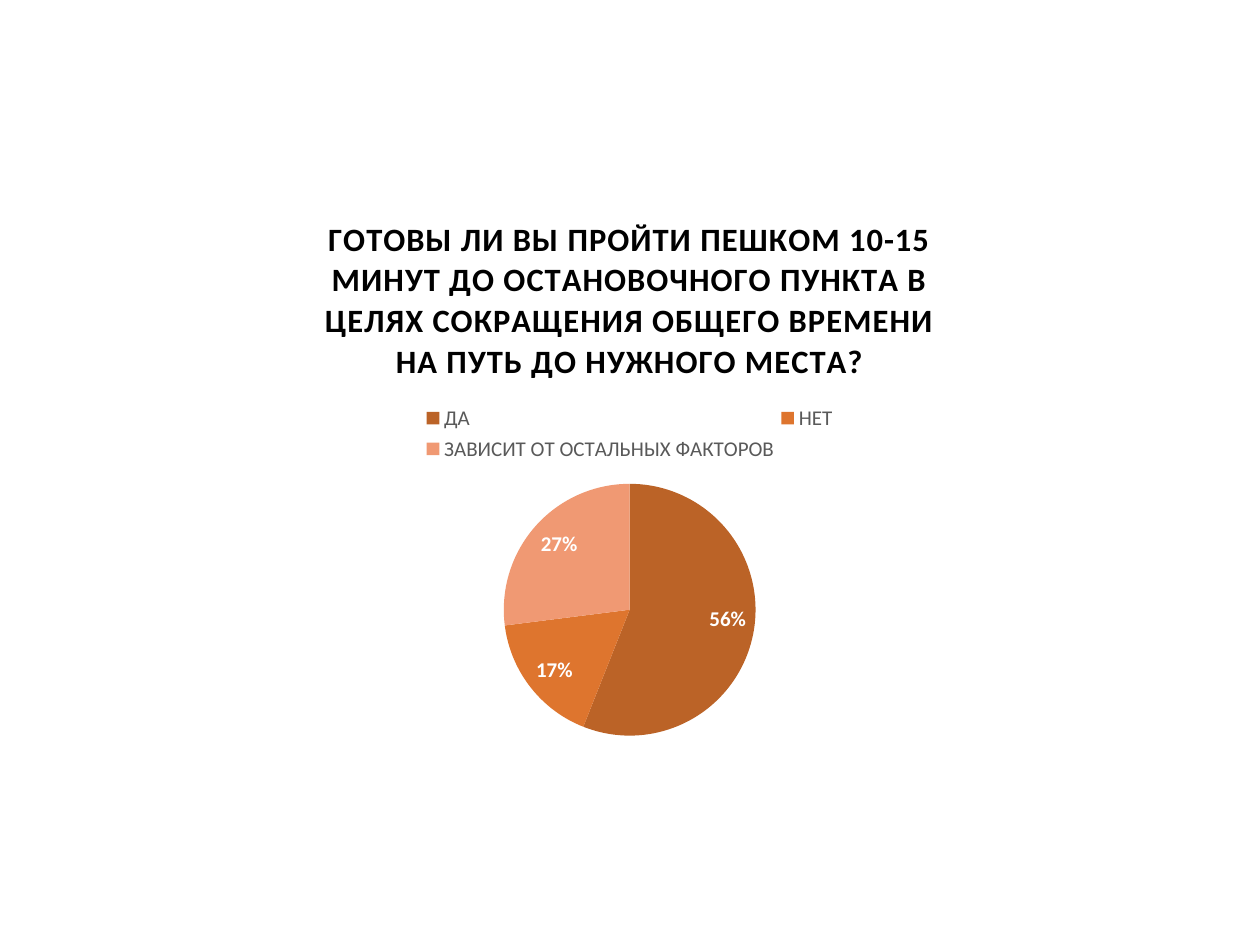
import dataclasses

import lxml.etree
import pptx
import pptx.chart.data
import pptx.dml.color
import pptx.enum.chart
import pptx.oxml.ns
import pptx.util


@dataclasses.dataclass(frozen=True)
class Theme:
    """Colours, font and type sizes of the slide."""

    font: str = "Calibri"
    title_color: str = "000000"
    legend_color: str = "595959"
    label_color: str = "FFFFFF"
    slice_colors: tuple = ("BB6327", "DE752E", "F09973")
    base_size: float = 10
    title_size: float = 18.6
    text_size: float = 12
    title_spacing: int = 50


class SlideBuilder:
    """Holds the theme and the current slide."""

    def __init__(self, slide, theme):
        """Keep the slide to fill and the theme to use."""
        self.slide = slide
        self.theme = theme

    def style(self, font, size, color, bold=False):
        """Apply the theme font with a size and a colour."""
        font.name = self.theme.font
        font.size = pptx.util.Pt(size)
        font.bold = bold
        font.color.rgb = pptx.dml.color.RGBColor.from_string(color)

    def place(self, element, index, **fractions):
        """Give a chart part a fixed place in fractions of the chart."""
        tag = pptx.oxml.ns.qn
        for old_layout in element.findall(tag("c:layout")):
            element.remove(old_layout)
        layout = lxml.etree.Element(tag("c:layout"))
        manual = lxml.etree.SubElement(layout, tag("c:manualLayout"))
        settings = {"xMode": "edge", "yMode": "edge", **fractions}
        if element.tag == tag("c:plotArea"):
            settings = {"layoutTarget": "inner", **settings}
        for name, value in settings.items():
            lxml.etree.SubElement(manual, tag(f"c:{name}")).set("val", str(value))
        element.insert(index, layout)

    def pie_chart(self, box, categories, values):
        """Add a pie chart with percent labels."""
        data = pptx.chart.data.CategoryChartData()
        data.categories = categories
        data.add_series("Series 1", values)
        chart = self.slide.shapes.add_chart(
            pptx.enum.chart.XL_CHART_TYPE.PIE, *map(pptx.util.Cm, box), data
        ).chart
        self.style(chart.font, self.theme.base_size, self.theme.title_color)
        plot = chart.plots[0]
        plot.vary_by_categories = True
        for index, color in enumerate(self.theme.slice_colors):
            fill = plot.series[0].points[index].format.fill
            fill.solid()
            fill.fore_color.rgb = pptx.dml.color.RGBColor.from_string(color)
        labels = plot.series[0].data_labels
        labels.show_percentage = True
        labels.show_value = False
        labels.number_format = "0%"
        labels.number_format_is_linked = False
        labels.position = pptx.enum.chart.XL_LABEL_POSITION.INSIDE_END
        self.style(labels.font, self.theme.text_size, self.theme.label_color, True)
        self.place(plot._element.getparent(), 0, x=0.35, y=0.52, w=0.3, h=0.45)
        return chart

    def chart_title(self, chart, text):
        """Add a bold, letter-spaced title to a chart."""
        title = chart.chart_title
        paragraph = title.text_frame.paragraphs[0]
        paragraph.text = text
        for run in paragraph.runs:
            self.style(run.font, self.theme.title_size, self.theme.title_color, True)
            run._r.get_or_add_rPr().set("spc", str(self.theme.title_spacing))
        self.place(title._element, 1, x=0.13, y=0.03)

    def chart_legend(self, chart):
        """Add a legend between the title and the pie."""
        chart.has_legend = True
        legend = chart.legend
        legend.position = pptx.enum.chart.XL_LEGEND_POSITION.TOP
        legend.include_in_layout = False
        self.style(legend.font, self.theme.text_size, self.theme.legend_color)
        self.place(legend._element, 1, x=0.25, y=0.37, w=0.5, h=0.12)


def main():
    """Build the survey slide and save it."""
    presentation = pptx.Presentation()
    presentation.slide_width = pptx.util.Cm(25.4)
    presentation.slide_height = pptx.util.Cm(19.05)
    slide = presentation.slides.add_slide(presentation.slide_layouts[6])
    builder = SlideBuilder(slide, Theme())
    chart = builder.pie_chart(
        (4.23, 3.89, 16.93, 11.28),
        ("ДА", "НЕТ", "ЗАВИСИТ ОТ ОСТАЛЬНЫХ ФАКТОРОВ"),
        (56, 17, 27),
    )
    builder.chart_title(
        chart,
        "ГОТОВЫ ЛИ ВЫ ПРОЙТИ ПЕШКОМ 10-15 МИНУТ ДО ОСТАНОВОЧНОГО ПУНКТА "
        "В ЦЕЛЯХ СОКРАЩЕНИЯ ОБЩЕГО ВРЕМЕНИ НА ПУТЬ ДО НУЖНОГО МЕСТА?",
    )
    builder.chart_legend(chart)
    presentation.save("out.pptx")


if __name__ == "__main__":
    main()
